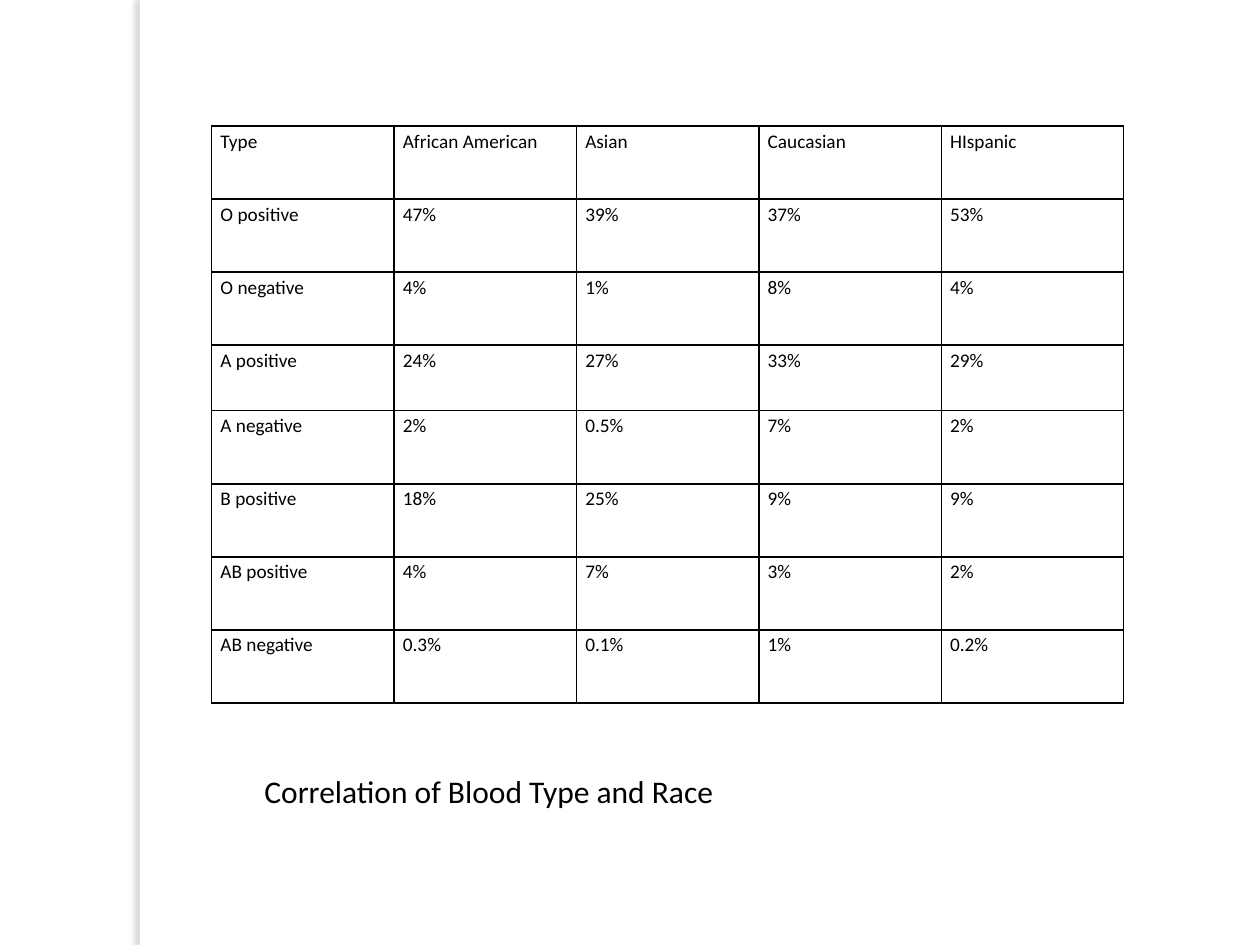
import pptx
import pptx.dml.color
import pptx.enum.shapes
import pptx.enum.text
import pptx.oxml
import pptx.oxml.ns
import pptx.util

SLIDE_WIDTH = pptx.util.Inches(10)
SLIDE_HEIGHT = pptx.util.Inches(7.5)
FONT = "Calibri"
COLORS = {"paper": "FFFFFF", "ink": "000000", "shade": "736F63"}

BLOOD_TYPES = [
    ("Type", "African American", "Asian", "Caucasian", "HIspanic"),
    ("O positive", "47%", "39%", "37%", "53%"),
    ("O negative", "4%", "1%", "8%", "4%"),
    ("A positive", "24%", "27%", "33%", "29%"),
    ("A negative", "2%", "0.5%", "7%", "2%"),
    ("B positive", "18%", "25%", "9%", "9%"),
    ("AB positive", "4%", "7%", "3%", "2%"),
    ("AB negative", "0.3%", "0.1%", "1%", "0.2%"),
]
# Relative row heights: the "A positive" row is a little shorter
ROW_WEIGHTS = [0.52 if row[0] == "A positive" else 0.58 for row in BLOOD_TYPES]


def rgb(name):
    return pptx.dml.color.RGBColor.from_string(COLORS[name])


def inch_box(left, top, width, height):
    return [pptx.util.Inches(length) for length in (left, top, width, height)]


def style_text(paragraph, size):
    for run in paragraph.runs:
        run.font.name = FONT
        run.font.size = pptx.util.Pt(size)
        run.font.color.rgb = rgb("ink")


def add_xml(parent, xml):
    namespace = pptx.oxml.ns.nsdecls("a")
    parent.append(pptx.oxml.parse_xml(xml.replace(" ", f" {namespace} ", 1)))


def add_side_strip(slide, box):
    """White strip that casts a soft shadow to its left."""
    strip = slide.shapes.add_shape(pptx.enum.shapes.MSO_SHAPE.RECTANGLE, *box)
    strip.fill.solid()
    strip.fill.fore_color.rgb = rgb("paper")
    strip.line.fill.background()
    reach = pptx.util.Pt(3)
    add_xml(
        strip._element.spPr,
        f'<a:effectLst ><a:outerShdw blurRad="{reach}" dist="{reach}" dir="10800000"'
        f' algn="tl" rotWithShape="0"><a:srgbClr val="{COLORS["shade"]}">'
        '<a:alpha val="25000"/></a:srgbClr></a:outerShdw></a:effectLst>',
    )


def style_cell(cell):
    cell.margin_left = cell.margin_right = pptx.util.Inches(0.07)
    cell.margin_top = cell.margin_bottom = 0
    paragraph = cell.text_frame.paragraphs[0]
    paragraph.line_spacing = 1.15
    style_text(paragraph, 11)
    # Borders come before the fill in the cell properties
    for side in ("lnL", "lnR", "lnT", "lnB"):
        add_xml(
            cell._tc.get_or_add_tcPr(),
            f'<a:{side} w="{pptx.util.Pt(1)}"><a:solidFill>'
            f'<a:srgbClr val="{COLORS["ink"]}"/></a:solidFill></a:{side}>',
        )
    cell.fill.background()


def add_blood_table(slide, box):
    width, height = box[2:]
    row_count, column_count = len(BLOOD_TYPES), len(BLOOD_TYPES[0])
    table = slide.shapes.add_table(row_count, column_count, *box).table
    table.first_row = table.horz_banding = False
    for column in table.columns:
        column.width = width // column_count
    for row, weight, values in zip(table.rows, ROW_WEIGHTS, BLOOD_TYPES):
        row.height = int(height * weight / sum(ROW_WEIGHTS))
        for cell, value in zip(row.cells, values):
            cell.text_frame.text = value
            style_cell(cell)


def add_caption(slide, box):
    frame = slide.shapes.add_textbox(*box).text_frame
    frame.word_wrap = False
    frame.auto_size = pptx.enum.text.MSO_AUTO_SIZE.SHAPE_TO_FIT_TEXT
    frame.text = "Correlation of Blood Type and Race"
    style_text(frame.paragraphs[0], 18)


def main():
    deck = pptx.Presentation()
    deck.slide_width, deck.slide_height = SLIDE_WIDTH, SLIDE_HEIGHT
    slide = deck.slides.add_slide(deck.slide_layouts[6])
    slide.background.fill.solid()
    slide.background.fill.fore_color.rgb = rgb("paper")

    add_side_strip(slide, inch_box(1.11, 0, 0.08, 7.5))
    add_blood_table(slide, inch_box(1.68, 1, 7.24, 4.58))
    add_caption(slide, inch_box(2, 6.08, 3.85, 0.4))
    deck.save("out.pptx")


if __name__ == "__main__":
    main()
